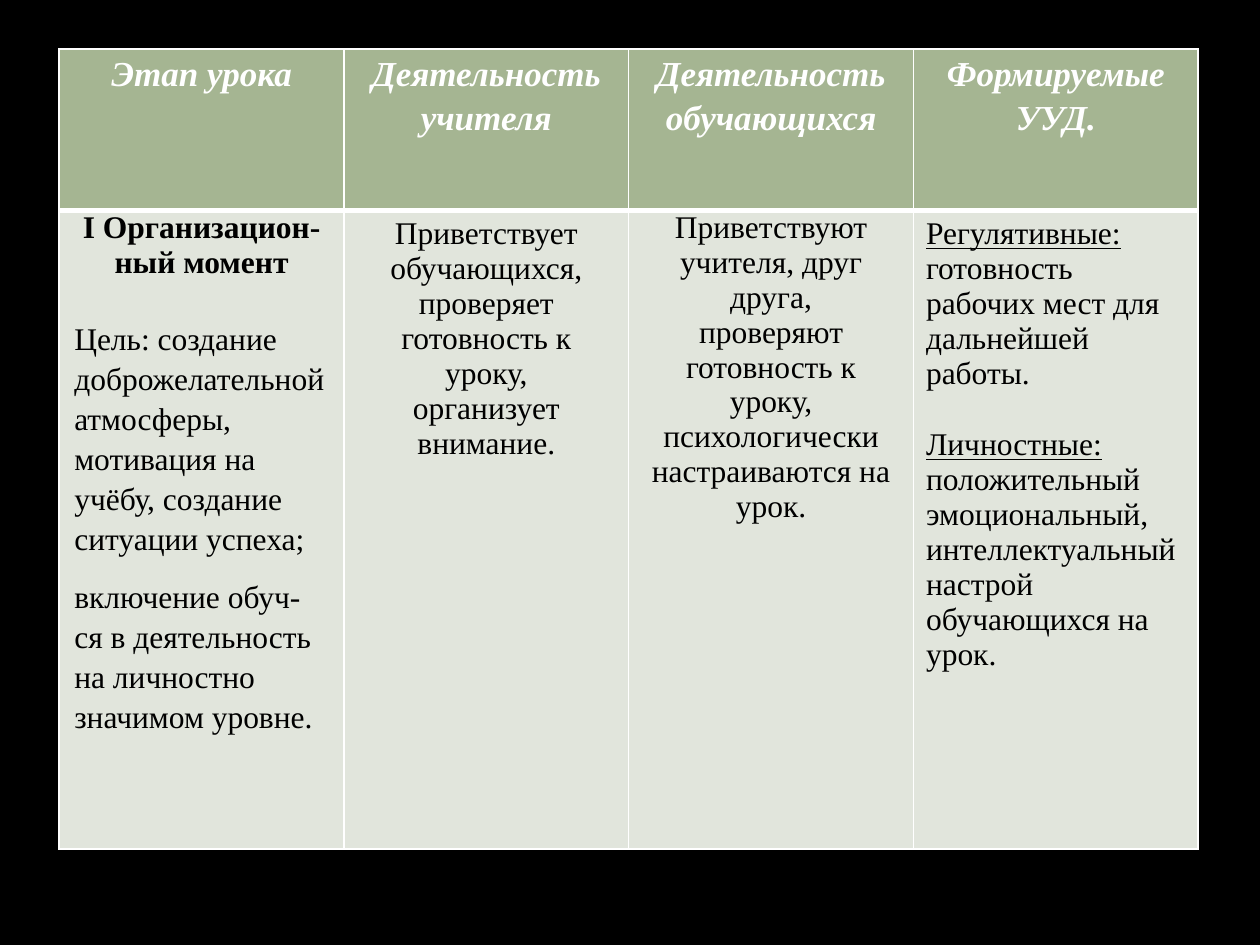
from pptx import Presentation
from pptx import util as u
from pptx.dml.color import RGBColor
from pptx.enum import text
from pptx.oxml import parse_xml
from pptx.oxml.ns import nsdecls

COLORS = {
    "background": "000000",
    "header": "A5B592",
    "body": "E1E5DC",
    "light": "FFFFFF",
    "dark": "000000",
}
CENTER = text.PP_ALIGN.CENTER
LEFT = text.PP_ALIGN.LEFT


class LessonSlide:
    font_name = "Times New Roman"

    def __init__(self, presentation):
        self.slide = presentation.slides.add_slide(presentation.slide_layouts[6])
        fill = self.slide.background.fill
        fill.solid()
        fill.fore_color.rgb = self.color("background")

    def color(self, name):
        return RGBColor.from_string(COLORS[name])

    def table(self, left, top, widths, heights):
        frame = self.slide.shapes.add_table(
            len(heights), len(widths), u.Inches(left), u.Inches(top),
            u.Inches(sum(widths)), u.Inches(sum(heights)))
        for column, width in zip(frame.table.columns, widths):
            column.width = u.Inches(width)
        for row, height in zip(frame.table.rows, heights):
            row.height = u.Inches(height)
        return frame.table

    def cell(self, cell, fill, margins, borders):
        side, edge = margins
        cell.margin_left = cell.margin_right = u.Inches(side)
        cell.margin_top = cell.margin_bottom = u.Inches(edge)
        properties = cell._tc.get_or_add_tcPr()
        for tag, width in zip(("lnL", "lnR", "lnT", "lnB"), borders):
            properties.append(parse_xml(
                f'<a:{tag} {nsdecls("a")} w="{u.Pt(width)}"><a:solidFill>'
                f'<a:srgbClr val="{COLORS["light"]}"/></a:solidFill></a:{tag}>'))
        cell.fill.solid()
        cell.fill.fore_color.rgb = self.color(fill)

    def paragraphs(self, cell, items, size=18, color="dark"):
        frame = cell.text_frame
        for index, (wording, style) in enumerate(items):
            paragraph = frame.add_paragraph() if index else frame.paragraphs[0]
            paragraph.add_run().text = wording
            paragraph.alignment = style.get("align", CENTER)
            paragraph.line_spacing = style.get("spacing", 1.0)
            paragraph.space_before = u.Pt(style.get("before", 0))
            paragraph.space_after = u.Pt(style.get("after", 0))
            font = paragraph.font
            font.name = self.font_name
            font.size = u.Pt(size)
            font.bold = style.get("bold", False)
            font.italic = style.get("italic", False)
            font.underline = style.get("underline", False)
            font.color.rgb = self.color(color)


HEADER_STYLE = {"spacing": 1.15, "bold": True, "italic": True}
GOAL = {"align": LEFT, "spacing": 1.15, "after": 10}
SKILL = {"align": LEFT}
SKILL_HEADING = {"align": LEFT, "underline": True}
BLANK_LINE = {"before": 21}

HEADERS = ["Этап урока", "Деятельность учителя",
           "Деятельность обучающихся", "Формируемые УУД."]
STAGE = [
    ("I Организацион-ный момент", {"bold": True}),
    ("Цель: создание доброжелательной атмосферы, мотивация на учёбу, "
     "создание ситуации успеха;", GOAL | BLANK_LINE),
    ("включение обуч-ся в деятельность на личностно значимом уровне.", GOAL),
]
TEACHER = [
    ("Приветствует обучающихся, проверяет готовность к уроку,", {}),
    ("организует внимание.", {}),
]
STUDENTS = [
    ("Приветствуют учителя, друг друга,", {}),
    ("проверяют готовность к уроку,", {}),
    ("психологически настраиваются на урок.", {}),
]
SKILLS = [
    ("Регулятивные:", SKILL_HEADING),
    ("готовность рабочих мест для дальнейшей работы.", SKILL),
    ("Личностные:", SKILL_HEADING | BLANK_LINE),
    ("положительный эмоциональный, интеллектуальный настрой "
     "обучающихся на урок.", SKILL),
]
NARROW, DEFAULT = (0.12, 0), (0.1, 0.05)
BODY = [(STAGE, NARROW), (TEACHER, DEFAULT), (STUDENTS, NARROW), (SKILLS, DEFAULT)]


def main():
    presentation = Presentation()
    presentation.slide_width = u.Inches(10)
    presentation.slide_height = u.Inches(7.5)
    lesson = LessonSlide(presentation)
    table = lesson.table(0.47, 0.39, [2.26] * 4, [1.28, 5.07])
    for column, (header, (items, margins)) in enumerate(zip(HEADERS, BODY)):
        head, body = table.cell(0, column), table.cell(1, column)
        lesson.cell(head, "header", (0.07, 0), (1, 1, 1, 3))
        lesson.paragraphs(head, [(header, HEADER_STYLE)], 20, "light")
        lesson.cell(body, "body", margins, (1, 1, 3, 1))
        lesson.paragraphs(body, items)
    presentation.save("out.pptx")


if __name__ == "__main__":
    main()
